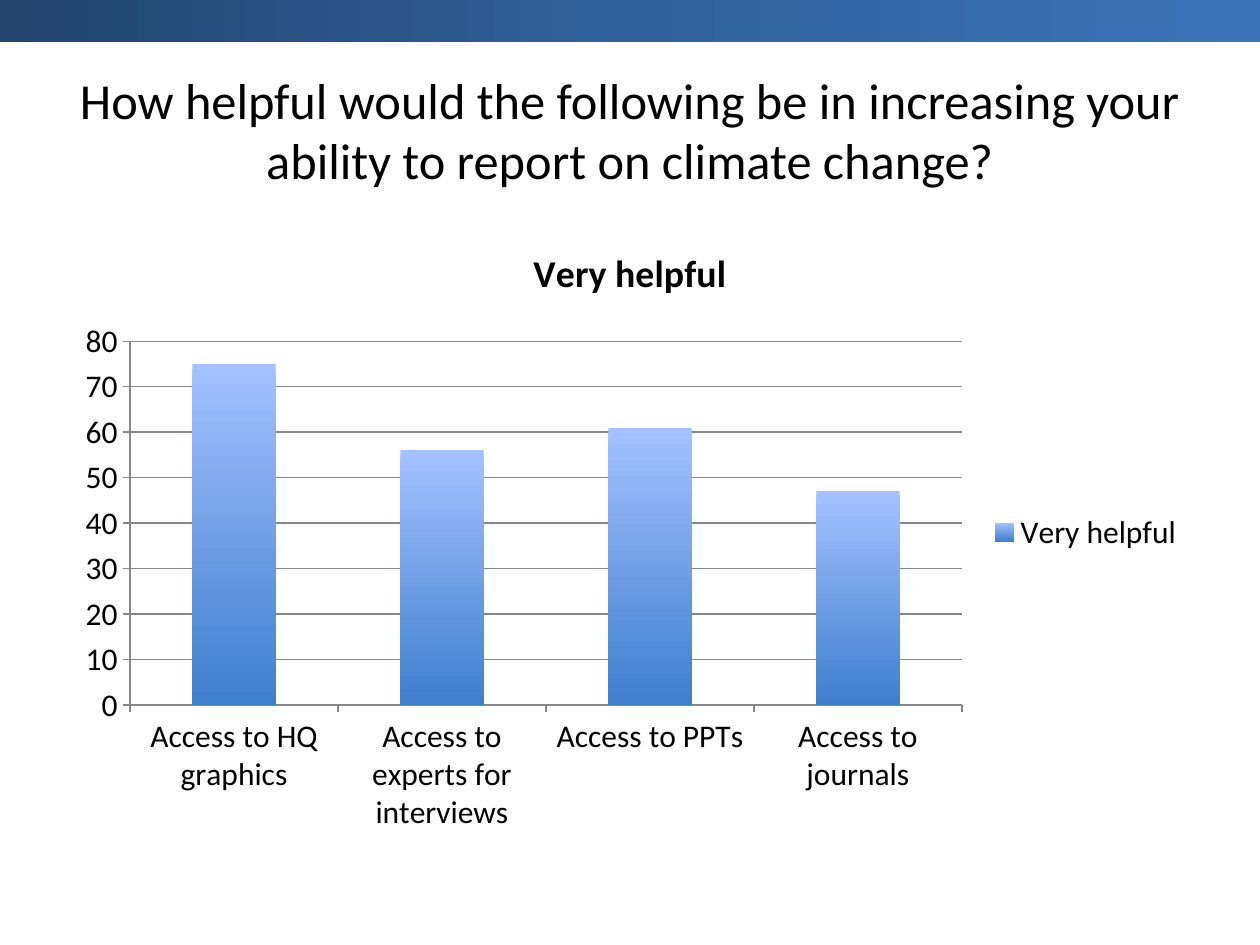
from copy import deepcopy

from pptx import Presentation
from pptx.chart.data import CategoryChartData
from pptx.dml.color import RGBColor
from pptx.enum import chart as charts, shapes, text
from pptx.oxml.ns import qn
from pptx.util import Pt

FONT = "Calibri"
BLACK = RGBColor(0x00, 0x00, 0x00)
WHITE = RGBColor(0xFF, 0xFF, 0xFF)
AXIS_GREY = RGBColor(0x87, 0x87, 0x87)
BANNER_BLUES = [
    RGBColor(0x22, 0x44, 0x6D),
    RGBColor(0x31, 0x61, 0x9B),
    RGBColor(0x3A, 0x73, 0xB8),
]
COLUMN_BLUES = [RGBColor(0xA5, 0xC1, 0xFF), RGBColor(0x3E, 0x7F, 0xCE)]

QUESTION = (
    "How helpful would the following be in increasing your "
    "ability to report on climate change?"
)
RATING = "Very helpful"
HELPFULNESS = {
    "Access to HQ graphics": 75,
    "Access to experts for interviews": 56,
    "Access to PPTs": 61,
    "Access to journals": 47,
}


def format_font(font, size, bold=False, color=BLACK):
    font.name = FONT
    font.size = Pt(size)
    font.bold = bold
    font.color.rgb = color


def write_text(frame, content, *, size, bold=False, color=BLACK,
               align=text.PP_ALIGN.CENTER):
    frame.text = content
    paragraph = frame.paragraphs[0]
    paragraph.alignment = align
    format_font(paragraph.runs[0].font, size, bold, color)


def fill_gradient(owner, fill, colors, angle):
    fill.gradient()
    fill.gradient_angle = angle
    stop_list = next(owner.iter(qn("a:gsLst")))
    for _ in colors[2:]:
        stop_list.append(deepcopy(stop_list[-1]))
    for index, (stop, color) in enumerate(zip(fill.gradient_stops, colors)):
        stop.position = index / (len(colors) - 1)
        stop.color.rgb = color


def add_question(slide):
    question = slide.shapes.title
    question.left, question.top = Pt(36), Pt(21.6)
    question.width, question.height = Pt(648), Pt(104.4)
    question.text_frame.word_wrap = True
    question.text_frame.vertical_anchor = text.MSO_ANCHOR.MIDDLE
    write_text(question.text_frame, QUESTION, size=28.8)


def format_axis(axis):
    axis.major_tick_mark = charts.XL_TICK_MARK.OUTSIDE
    axis.minor_tick_mark = charts.XL_TICK_MARK.NONE
    format_font(axis.tick_labels.font, 18)
    draw_line(axis.format.line)


def draw_line(line):
    line.color.rgb = AXIS_GREY
    line.width = Pt(0.75)


def add_helpfulness_chart(slide):
    ratings = CategoryChartData()
    ratings.categories = list(HELPFULNESS)
    ratings.add_series(RATING, list(HELPFULNESS.values()))
    chart = slide.shapes.add_chart(
        charts.XL_CHART_TYPE.COLUMN_STACKED,
        Pt(36), Pt(126), Pt(648), Pt(356.4), ratings,
    ).chart
    format_font(chart.font, 18)

    chart.has_title = True
    write_text(chart.chart_title.text_frame, RATING, size=21.6, bold=True)
    chart.chart_title.include_in_layout = False
    chart.has_legend = True
    chart.legend.position = charts.XL_LEGEND_POSITION.RIGHT
    chart.legend.include_in_layout = False
    format_font(chart.legend.font, 18)

    format_axis(chart.category_axis)
    format_axis(chart.value_axis)
    chart.value_axis.minimum_scale = 0
    chart.value_axis.maximum_scale = 80
    chart.value_axis.major_unit = 10
    chart.value_axis.has_major_gridlines = True
    draw_line(chart.value_axis.major_gridlines.format.line)

    plot = chart.plots[0]
    plot.gap_width = 150
    plot.overlap = 100
    plot.vary_by_categories = False
    columns = plot.series[0]
    fill_gradient(columns._element, columns.format.fill, COLUMN_BLUES, 270)


def add_banner(slide, width):
    banner = slide.shapes.add_shape(
        shapes.MSO_SHAPE.RECTANGLE, 0, 0, width, Pt(24)
    )
    banner.shadow.inherit = False
    banner.line.fill.background()
    fill_gradient(banner._element, banner.fill, BANNER_BLUES, 0)


def main():
    deck = Presentation()
    deck.slide_width, deck.slide_height = Pt(720), Pt(540)
    slide = deck.slides.add_slide(deck.slide_layouts.get_by_name("Title Only"))
    slide.background.fill.solid()
    slide.background.fill.fore_color.rgb = WHITE
    add_question(slide)
    add_helpfulness_chart(slide)
    add_banner(slide, deck.slide_width)
    deck.save("out.pptx")


if __name__ == "__main__":
    main()
